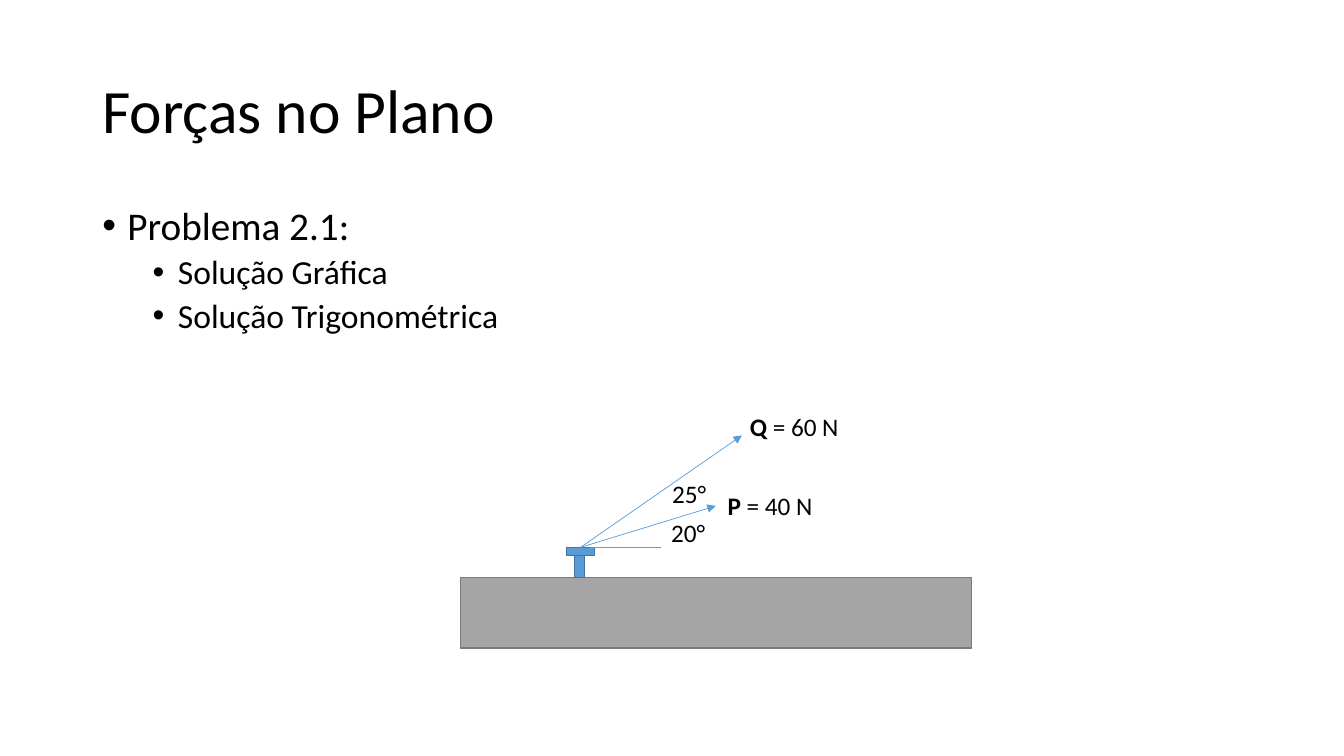
from lxml import etree
from pptx import Presentation, util as u
from pptx.dml import color
from pptx.enum import shapes, text
from pptx.oxml import ns

CELL = u.Inches(1) / 12  # the slide is a grid of 160 columns by 90 rows
COLORS = {
    "ink": "000000",
    "block": "A5A5A5",
    "block edge": "7A7A7A",
    "steel": "5B9BD5",
    "steel edge": "43739E",
}


def grid(*cells):
    return [u.Emu(round(cell * CELL)) for cell in cells]


def rgb(name):
    return color.RGBColor.from_string(COLORS[name])


def add_child(parent, tag, **attributes):
    return etree.SubElement(parent, ns.qn(tag), attributes)


class Sketch:
    """Draws on one slide in a shared style, measured in grid cells."""

    font = "Calibri"

    def __init__(self, slide):
        self.shapes = slide.shapes

    def text_box(self, left, top, width, height, wrap=True):
        frame = self.shapes.add_textbox(*grid(left, top, width, height)).text_frame
        frame.word_wrap = wrap
        return frame

    def run(self, paragraph, wording, size, bold=False):
        run = paragraph.add_run()
        run.text = wording
        run.font.name = self.font
        run.font.size = u.Pt(size)
        run.font.bold = bold
        run.font.color.rgb = rgb("ink")

    def title(self, wording, *area):
        frame = self.text_box(*area)
        frame.vertical_anchor = text.MSO_ANCHOR.MIDDLE
        frame.paragraphs[0].line_spacing = 0.9
        self.run(frame.paragraphs[0], wording, 44)

    def bullets(self, items, *area):
        """Items are pairs of outline level and wording."""
        frame = self.text_box(*area)
        for index, (level, wording) in enumerate(items):
            paragraph = frame.add_paragraph() if index else frame.paragraphs[0]
            paragraph.level = level
            paragraph.line_spacing = 0.9
            paragraph.space_before = u.Pt(5 if level else 10)
            properties = paragraph._p.get_or_add_pPr()
            properties.set("marL", str(u.Inches(0.25 + 0.5 * level)))
            properties.set("indent", str(u.Inches(-0.25)))
            add_child(properties, "a:buFont", typeface="Arial")
            add_child(properties, "a:buChar", char="•")
            self.run(paragraph, wording, 24 if level else 28)

    def label(self, wording, left, top, width, symbol=""):
        frame = self.text_box(left, top, width, 4.8, wrap=False)
        frame.auto_size = text.MSO_AUTO_SIZE.SHAPE_TO_FIT_TEXT
        if symbol:
            self.run(frame.paragraphs[0], symbol, 18, bold=True)
        self.run(frame.paragraphs[0], wording, 18)

    def rectangle(self, material, *area):
        part = self.shapes.add_shape(shapes.MSO_SHAPE.RECTANGLE, *grid(*area))
        part.shadow.inherit = False
        part.fill.solid()
        part.fill.fore_color.rgb = rgb(material)
        part.line.color.rgb = rgb(f"{material} edge")
        part.line.width = u.Pt(1)
        return part

    def line(self, *ends):
        line = self.shapes.add_connector(shapes.MSO_CONNECTOR.STRAIGHT, *grid(*ends))
        line.line.color.rgb = rgb("steel")
        line.line.width = u.Pt(0.5)
        add_child(line._element.spPr, "a:effectLst")
        return line

    def force(self, body, *ends):
        """Arrow that starts at the middle of the body's top side."""
        arrow = self.line(*ends)
        arrow.begin_connect(body, 0)
        add_child(arrow.line._get_or_add_ln(), "a:tailEnd", type="triangle")


def main():
    deck = Presentation()
    deck.slide_width, deck.slide_height = grid(160, 90)
    sketch = Sketch(deck.slides.add_slide(deck.slide_layouts[6]))

    sketch.title("Forças no Plano", 11, 4.8, 138, 17.4)
    outline = [(0, "Problema 2.1:"), (1, "Solução Gráfica"), (1, "Solução Trigonométrica")]
    sketch.bullets(outline, 11, 24, 87.6, 18.5)

    sketch.rectangle("block", 54.84, 68.76, 60.84, 8.4)
    sketch.rectangle("steel", 68.4, 66, 1.2, 2.76)
    pin_head = sketch.rectangle("steel", 67.44, 65.16, 3.36, 0.96)

    sketch.line(70.2, 65.16, 78.72, 65.16)
    for tip in [(85.2, 60.24), (88.32, 51.84)]:
        sketch.force(pin_head, 69.12, 65.16, *tip)

    sketch.label("20°", 78.72, 60.96, 6.48)
    sketch.label("25°", 78.84, 56.4, 6.48)
    sketch.label(" = 40 N", 85.44, 57.84, 12.6, symbol="P")
    sketch.label(" = 60 N", 88.08, 48.36, 13.08, symbol="Q")

    deck.save("out.pptx")


if __name__ == "__main__":
    main()
